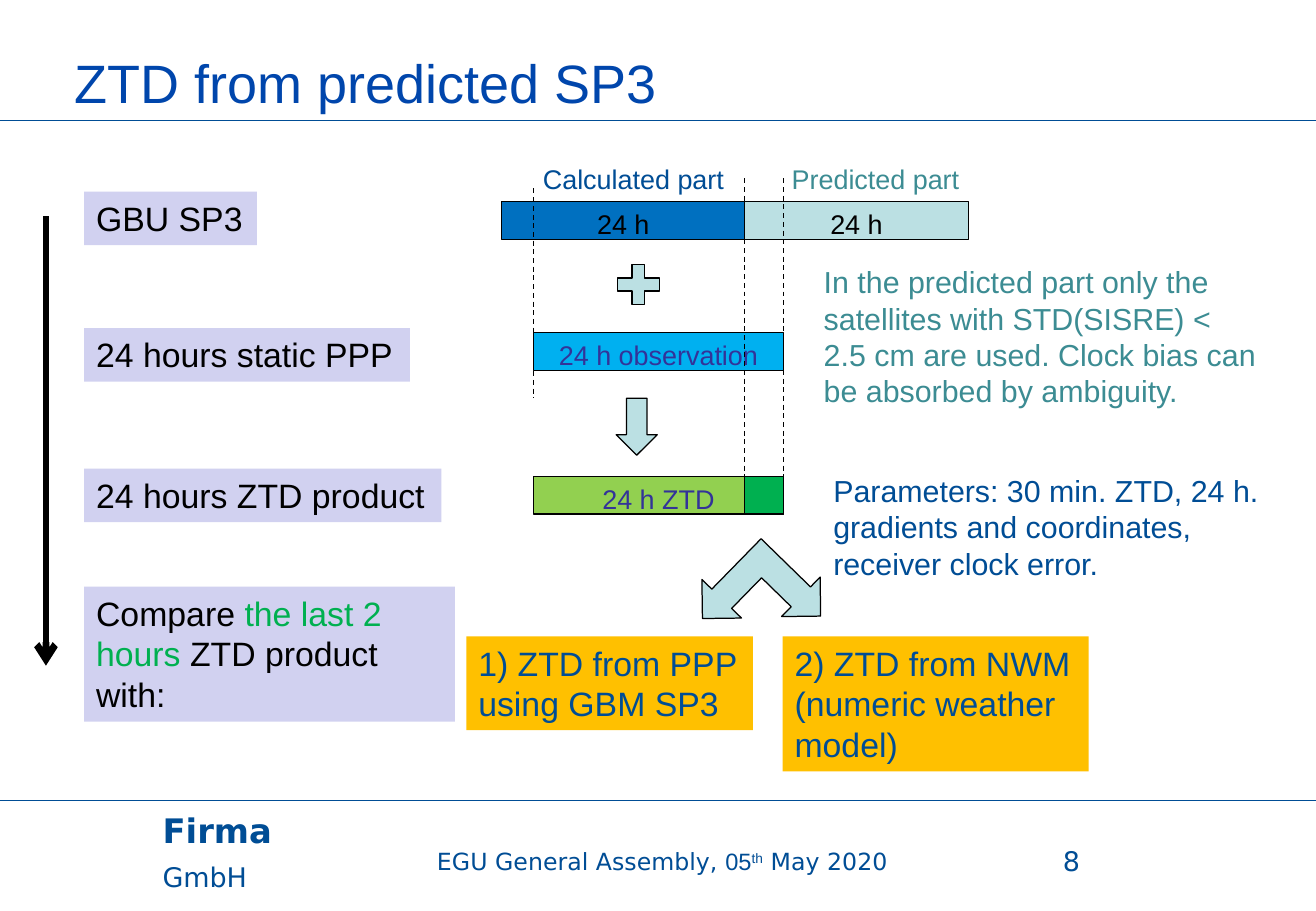
from pptx import Presentation
from pptx.dml.color import RGBColor
from pptx.enum.dml import MSO_LINE
from pptx.enum.shapes import MSO_CONNECTOR, MSO_SHAPE
from pptx.enum.text import MSO_ANCHOR, PP_ALIGN
from pptx.oxml.ns import qn
from pptx.util import Cm, Pt
from lxml import etree

RECT, PLUS = MSO_SHAPE.RECTANGLE, MSO_SHAPE.MATH_PLUS
DOWN, FORK = MSO_SHAPE.DOWN_ARROW, MSO_SHAPE.LEFT_UP_ARROW
STRAIGHT, DASH = MSO_CONNECTOR.STRAIGHT, MSO_LINE.DASH
LEFT, CENTER = PP_ALIGN.LEFT, PP_ALIGN.CENTER
TOP, MIDDLE = MSO_ANCHOR.TOP, MSO_ANCHOR.MIDDLE

BLACK = RGBColor(0x00, 0x00, 0x00)
NAVY = RGBColor(0x00, 0x4D, 0x95)
TITLE_BLUE = RGBColor(0x00, 0x46, 0xAC)
INDIGO = RGBColor(0x33, 0x33, 0x99)
TEAL = RGBColor(0x3C, 0x8C, 0x93)
PALE_TEAL = RGBColor(0xBB, 0xE0, 0xE3)
LILAC = RGBColor(0xD1, 0xD1, 0xF0)
BLUE = RGBColor(0x00, 0x70, 0xC0)
SKY = RGBColor(0x00, 0xB0, 0xF0)
LIME = RGBColor(0x92, 0xD0, 0x50)
GREEN = RGBColor(0x00, 0xB0, 0x50)
ORANGE = RGBColor(0xFF, 0xC0, 0x00)

SANS, FOOTER_FONT = "Arial", "DejaVu Sans"
SLIDE_W, SLIDE_H = 27.51, 19.05


def add_run(p, text, size, color, font=SANS, bold=False):
    r = p.add_run()
    r.text = text
    r.font.size, r.font.name, r.font.bold = Pt(size), font, bold
    r.font.color.rgb = color
    return r


def frame(sp, align=LEFT, anchor=TOP):
    tf = sp.text_frame
    tf.word_wrap = True
    tf.vertical_anchor = anchor
    tf.paragraphs[0].alignment = align
    return tf


def add_text(s, x, y, w, h, align=LEFT, anchor=TOP):
    return frame(s.shapes.add_textbox(Cm(x), Cm(y), Cm(w), Cm(h)), align, anchor)


def add_block(s, kind, x, y, w, h, fill, outlined=True):
    sp = s.shapes.add_shape(kind, Cm(x), Cm(y), Cm(w), Cm(h))
    sp.shadow.inherit = False
    sp.fill.solid()
    sp.fill.fore_color.rgb = fill
    if outlined:
        sp.line.color.rgb = BLACK
        sp.line.width = Pt(0.75)
    else:
        sp.line.fill.background()
    return sp


def add_line(s, x1, y1, x2, y2, color, width):
    line = s.shapes.add_connector(STRAIGHT, Cm(x1), Cm(y1), Cm(x2), Cm(y2))
    line.line.color.rgb = color
    line.line.width = Pt(width)
    etree.SubElement(line._element.spPr, qn("a:effectLst"))
    return line


def header(s, x, y, w, h):
    add_line(s, x, y + h, x + w, y + h, NAVY, 0.5)
    title = s.shapes.title
    title.left, title.top = Cm(x + 1.3), Cm(y + 0.91)
    title.width, title.height = Cm(22.81), Cm(1.6)
    add_run(frame(title).paragraphs[0], "ZTD from predicted SP3", 32, TITLE_BLUE)


def steps(s, x, y, w, h):
    # Flow arrow beside the steps
    arrow = add_line(s, x, y + 0.51, x, y + 9.91, BLACK, 4)
    ln = arrow.line._get_or_add_ln()
    etree.SubElement(ln, qn("a:tailEnd"), type="arrow")
    # Step labels: offset, width, height, coloured parts
    rows = [
        (0, 3.61, 1.12, [("GBU SP3", BLACK)]),
        (2.85, 6.81, 1.12, [("24 hours static PPP", BLACK)]),
        (5.79, 7.47, 1.12, [("24 hours ZTD product", BLACK)]),
        (8.26, w - 0.83, h - 8.26, [("Compare ", BLACK), ("the last 2 hours ", GREEN),
                                    ("ZTD product with:", BLACK)]),
    ]
    for dy, row_w, row_h, parts in rows:
        sp = add_block(s, RECT, x + 0.8, y + dy, row_w, row_h, LILAC, False)
        p = frame(sp).paragraphs[0]
        for text, color in parts:
            add_run(p, text, 20, color)


def timeline(s, x, y, w, h):
    bar_h = 0.79
    start, now, end = x + 0.66, x + 5.08, x + 5.89
    # Part labels
    for left, text, color in [(x + 0.61, "Calculated part", NAVY),
                              (x + 5.81, "Predicted part", TEAL)]:
        add_run(add_text(s, left, y, 4.6, 0.94).paragraphs[0], text, 16, color)
    # Bars: left, right, offset, fill, label, label colour
    bars = [
        (x, now, 0.94, BLUE, "24 h", BLACK),
        (now, x + w, 0.94, PALE_TEAL, "24 h", BLACK),
        (start, end, 3.68, SKY, "24 h observation", INDIGO),
        (start, end, 6.68, LIME, "24 h ZTD", INDIGO),
        (now, end, 6.68, GREEN, "", INDIGO),
    ]
    for left, right, dy, fill, label, color in bars:
        sp = add_block(s, RECT, left, y + dy, right - left, bar_h, fill)
        if label:
            add_run(frame(sp, CENTER).paragraphs[0], label, 16, color)
    # Dashed time marks
    for mark, top, bottom in [(start, 0.66, 5.05), (now, 0.45, 6.68), (end, 0.45, 6.68)]:
        line = add_line(s, mark, y + top, mark, y + bottom, BLACK, 0.75)
        line.line.dash_style = DASH
    # Operators
    add_block(s, PLUS, x + 2.26, y + 2.1, 1.19, 1.14, PALE_TEAL)
    add_block(s, DOWN, x + 2.39, y + 5.05, 0.86, 1.19, PALE_TEAL)
    fork = add_block(s, FORK, x + 4.27, y + h - 2.34, 2.31, 2.34, PALE_TEAL)
    fork.rotation = 224.3


def remarks(s, x, y, w, h):
    predicted = ("In the predicted part only the satellites with STD(SISRE) < 2.5 cm "
                 "are used. Clock bias can be absorbed by ambiguity.")
    parameters = ("Parameters: 30 min. ZTD, 24 h. gradients and coordinates, "
                  "receiver clock error.")
    tf = add_text(s, x, y, 9.55, 3.33)
    add_run(tf.paragraphs[0], predicted, 18, TEAL)
    tf = add_text(s, x + 0.2, y + h - 2.57, w - 0.2, 2.57)
    add_run(tf.paragraphs[0], parameters, 18, NAVY)


def references(s, x, y, w, h):
    for left, box_w, box_h, text in [
        (x, 5.99, 1.96, "1) ZTD from PPP using GBM SP3"),
        (x + w - 6.4, 6.4, h, "2) ZTD from NWM (numeric weather model)"),
    ]:
        sp = add_block(s, RECT, left, y, box_w, box_h, ORANGE, False)
        add_run(frame(sp).paragraphs[0], text, 20, NAVY)


def footer(s, x, y, w, h):
    add_line(s, x, y, x + w, y, NAVY, 0.5)
    # Company
    tf = add_text(s, x + 3.15, y + 0.07, 3.81, h - 0.3)
    p = tf.paragraphs[0]
    p.space_after = Pt(6)
    add_run(p, "Firma", 20, NAVY, FOOTER_FONT, True)
    add_run(tf.add_paragraph(), "GmbH", 16, NAVY, FOOTER_FONT)
    # Event and date
    p = add_text(s, x + 4.55, y + 0.79, 18.59, 0.94, CENTER, MIDDLE).paragraphs[0]
    add_run(p, "EGU General Assembly, ", 14, NAVY, FOOTER_FONT)
    add_run(p, "05", 14, NAVY)
    r = add_run(p, "th", 14, NAVY)
    r._r.get_or_add_rPr().set("baseline", "30000")
    add_run(p, " May 2020", 14, NAVY, FOOTER_FONT)
    # Slide number
    p = add_text(s, x + 21.97, y + 0.79, 1.9, 0.94).paragraphs[0]
    add_run(p, "8", 16, NAVY, FOOTER_FONT)


def main():
    prs = Presentation()
    prs.slide_width, prs.slide_height = Cm(SLIDE_W), Cm(SLIDE_H)
    s = prs.slides.add_slide(prs.slide_layouts[5])
    header(s, 0, 0, SLIDE_W, 2.51)
    steps(s, 0.96, 4.01, 8.58, 11.08)
    timeline(s, 10.49, 3.28, 9.75, 10.39)
    remarks(s, 16.97, 5.38, 10.3, 6.94)
    references(s, 9.75, 13.31, 13.01, 2.82)
    footer(s, 0, 16.74, SLIDE_W, 2.31)
    prs.save("out.pptx")


if __name__ == "__main__":
    main()
